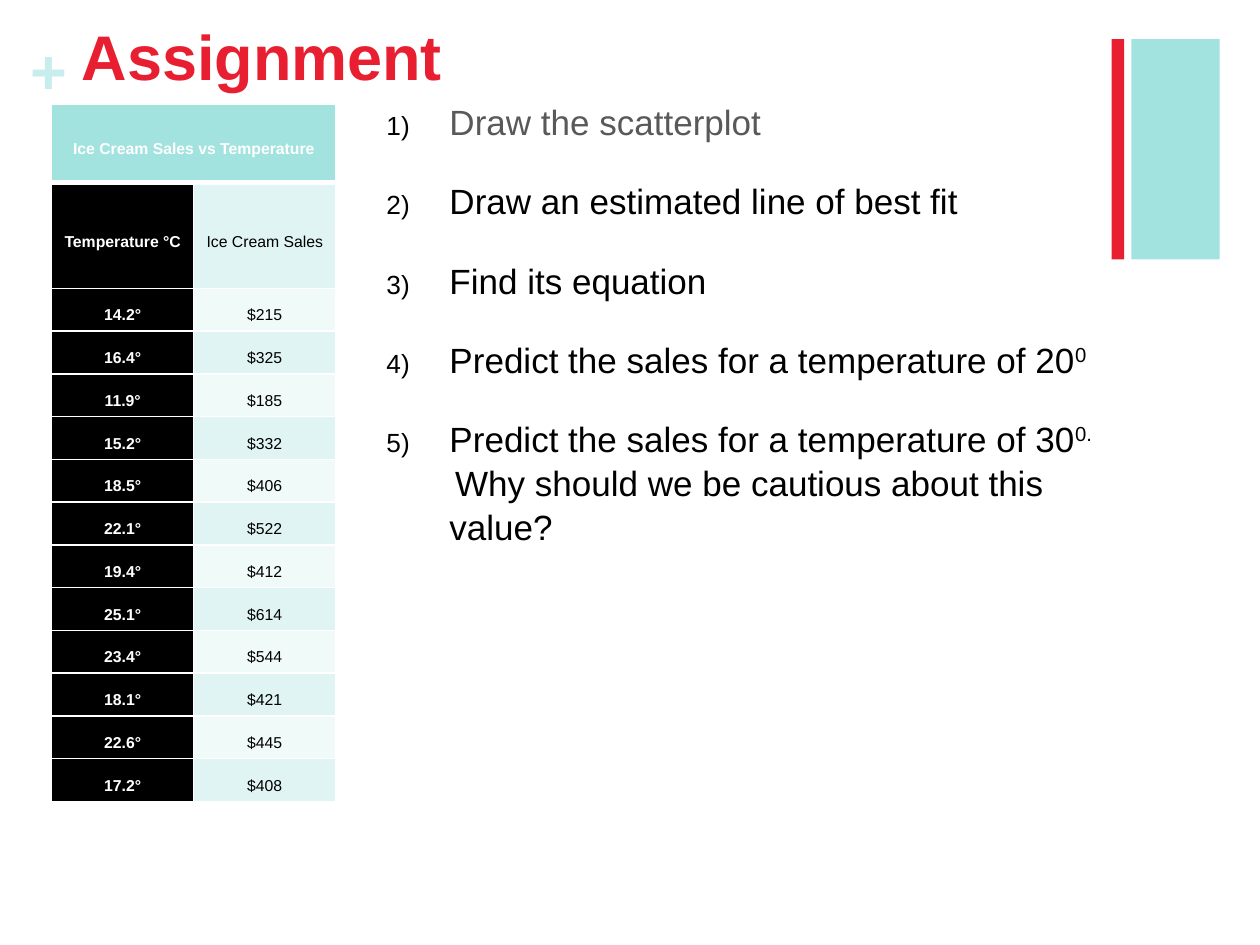
from dataclasses import dataclass

from lxml.etree import SubElement
from pptx import Presentation
from pptx.dml.color import RGBColor
from pptx.enum.shapes import MSO_SHAPE
from pptx.enum.text import MSO_ANCHOR, PP_ALIGN
from pptx.oxml.ns import qn
from pptx.util import Pt


@dataclass(frozen=True)
class Theme:
    font: str = "Arial"
    aqua: str = "A2E3DF"
    pale_aqua: str = "C7EEEC"
    red: str = "E81F30"
    gray: str = "595959"
    black: str = "000000"
    white: str = "FFFFFF"
    band_dark: str = "E0F4F3"
    band_light: str = "F0FAF9"
    title_size: int = 36
    body_size: int = 20
    table_size: int = 9


THEME = Theme()

TASKS = [
    [("Draw the scatterplot", 0)],
    [("Draw an estimated line of best fit", 0)],
    [("Find its equation", 0)],
    [("Predict the sales for a temperature of 20", 0), ("0", 30)],
    [
        ("Predict the sales for a temperature of 30", 0),
        ("0.  ", 30),
        ("Why should we be cautious about this value?", 0),
    ],
]

SALES = [
    ("14.2°", "$215"),
    ("16.4°", "$325"),
    ("11.9°", "$185"),
    ("15.2°", "$332"),
    ("18.5°", "$406"),
    ("22.1°", "$522"),
    ("19.4°", "$412"),
    ("25.1°", "$614"),
    ("23.4°", "$544"),
    ("18.1°", "$421"),
    ("22.6°", "$445"),
    ("17.2°", "$408"),
]


def apply_format(target, values):
    for name, value in values.items():
        setattr(target, name, value)


def add_run(paragraph, text, size, color, bold=False, baseline=0):
    run = paragraph.add_run()
    run.text = text
    apply_format(run.font, {"name": THEME.font, "size": Pt(size), "bold": bold})
    run.font.color.rgb = RGBColor.from_string(color)
    if baseline:
        run._r.get_or_add_rPr().set("baseline", str(baseline * 1000))


def add_text_box(slide, left, top, width, height, side_inset, top_inset):
    box = slide.shapes.add_textbox(Pt(left), Pt(top), Pt(width), Pt(height))
    apply_format(box.text_frame, {
        "word_wrap": True,
        "vertical_anchor": MSO_ANCHOR.TOP,
        "margin_left": Pt(side_inset),
        "margin_right": Pt(side_inset),
        "margin_top": Pt(top_inset),
        "margin_bottom": Pt(0),
    })
    return box.text_frame


def add_bar(slide, left, width, color):
    bar = slide.shapes.add_shape(
        MSO_SHAPE.RECTANGLE, Pt(left), Pt(22.3), Pt(width), Pt(126)
    )
    bar.shadow.inherit = False
    bar.fill.solid()
    bar.fill.fore_color.rgb = RGBColor.from_string(color)
    bar.line.fill.background()


def number_paragraph(paragraph):
    properties = paragraph._p.get_or_add_pPr()
    properties.set("marL", str(Pt(36)))
    properties.set("indent", str(-Pt(36)))
    bullet_color = SubElement(properties, qn("a:buClr"))
    SubElement(bullet_color, qn("a:srgbClr"), val=THEME.black)
    SubElement(properties, qn("a:buSzPct"), val="75000")
    SubElement(properties, qn("a:buFont"), typeface=THEME.font)
    SubElement(properties, qn("a:buAutoNum"), type="arabicParenR")


def add_tasks(slide):
    frame = add_text_box(slide, 213.8, 51.8, 420.5, 262.8, 7.2, 4.6)
    for index, pieces in enumerate(TASKS):
        paragraph = frame.add_paragraph() if index else frame.paragraphs[0]
        apply_format(paragraph, {"space_before": Pt(20), "line_spacing": 1.05})
        number_paragraph(paragraph)
        color = THEME.black if index else THEME.gray
        for text, baseline in pieces:
            add_run(paragraph, text, THEME.body_size, color, baseline=baseline)


def set_borders(cell, bottom_width, top_width):
    properties = cell._tc.get_or_add_tcPr()
    widths = {"lnL": 1, "lnR": 1, "lnT": top_width, "lnB": bottom_width}
    for side, width in widths.items():
        line = SubElement(properties, qn(f"a:{side}"), w=str(Pt(width)))
        fill = SubElement(line, qn("a:solidFill"))
        SubElement(fill, qn("a:srgbClr"), val=THEME.white)


def fill_cell(cell, text, fill, color, bold, line_height):
    margins = ("margin_left", "margin_right", "margin_top", "margin_bottom")
    apply_format(cell, dict.fromkeys(margins, Pt(2.9)))
    cell.vertical_anchor = MSO_ANCHOR.MIDDLE
    cell.fill.solid()
    cell.fill.fore_color.rgb = RGBColor.from_string(fill)
    paragraph = cell.text_frame.paragraphs[0]
    apply_format(paragraph, {
        "alignment": PP_ALIGN.CENTER,
        "line_spacing": Pt(line_height),
    })
    add_run(paragraph, text, THEME.table_size, color, bold)


def add_sales_table(slide):
    rows = [("Temperature °C", "Ice Cream Sales"), *SALES]
    heights = [45, 60.5] + [24.45] * len(SALES)
    table = slide.shapes.add_table(
        len(heights), 2, Pt(29.5), Pt(59.3), Pt(162.4), Pt(sum(heights))
    ).table
    for column in table.columns:
        column.width = Pt(81.2)
    for index, height in enumerate(heights):
        table.rows[index].height = Pt(height)
        for cell in table.rows[index].cells:
            set_borders(cell, 1 if index else 3, 3 if index == 1 else 1)

    heading = table.cell(0, 0)
    heading.merge(table.cell(0, 1))
    fill_cell(heading, "Ice Cream Sales vs Temperature",
              THEME.aqua, THEME.white, True, 16.5)
    for index, (temperature, sales) in enumerate(rows, start=1):
        line_height = 17.2 if index == 1 else 16.5
        band = THEME.band_dark if index % 2 else THEME.band_light
        fill_cell(table.cell(index, 0), temperature,
                  THEME.black, THEME.white, True, line_height)
        fill_cell(table.cell(index, 1), sales,
                  band, THEME.black, False, line_height)


def main():
    presentation = Presentation()
    apply_format(presentation, {"slide_width": Pt(720), "slide_height": Pt(540)})
    slide = presentation.slides.add_slide(presentation.slide_layouts[6])

    add_bar(slide, 646.5, 50.5, THEME.aqua)
    plus = add_text_box(slide, 17.3, 18, 24, 44, 0, 0)
    add_run(plus.paragraphs[0], "+", THEME.title_size, THEME.pale_aqua, True)
    add_bar(slide, 635.2, 7.2, THEME.red)
    title = add_text_box(slide, 39.6, 2.2, 594.7, 87.8, 7.2, 8)
    add_run(title.paragraphs[0], "Assignment", THEME.title_size, THEME.red, True)
    add_tasks(slide)
    add_sales_table(slide)

    presentation.save("out.pptx")


if __name__ == "__main__":
    main()
